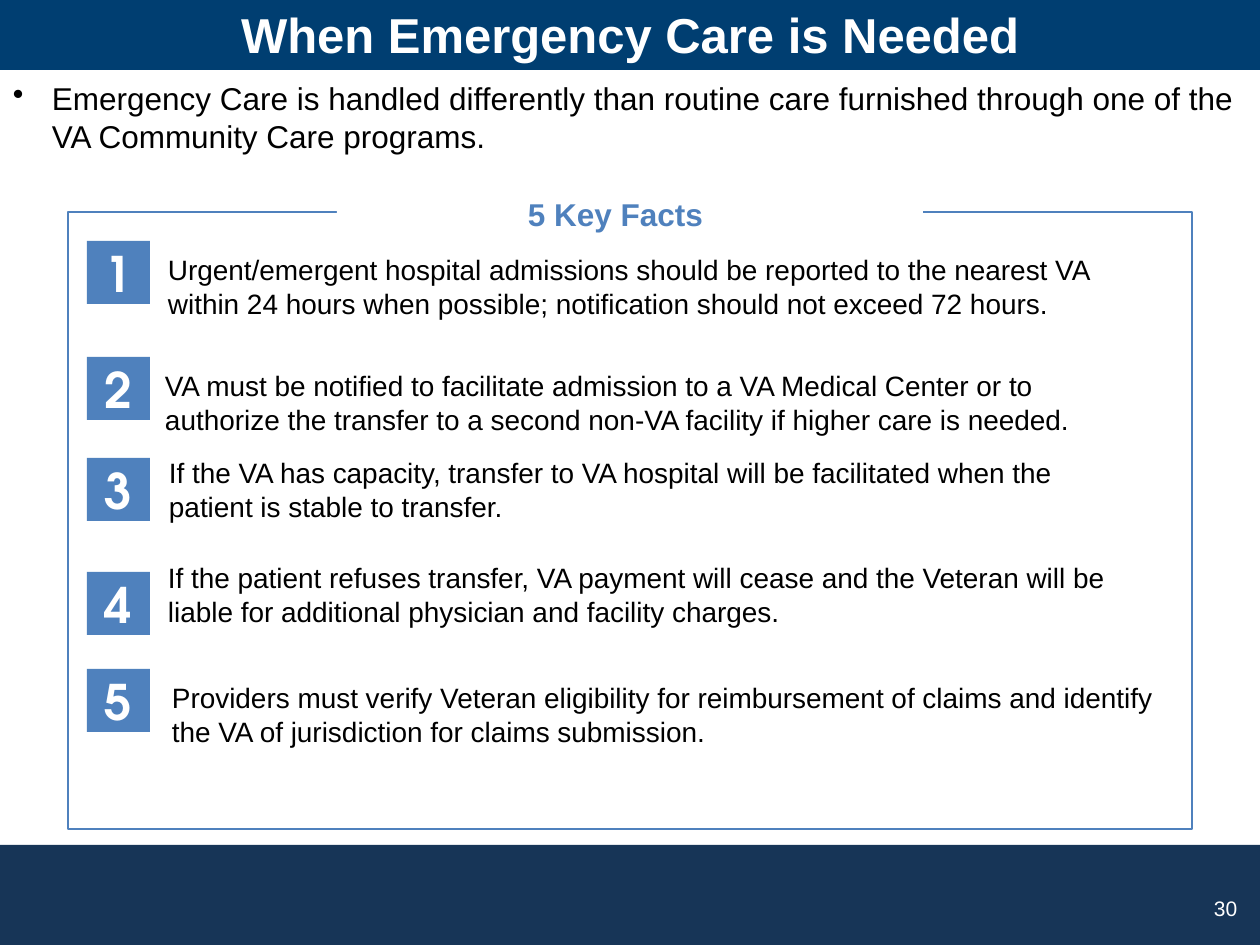
from lxml import etree
from pptx import Presentation
from pptx.dml.color import RGBColor
from pptx.enum.shapes import MSO_SHAPE
from pptx.enum.text import MSO_ANCHOR, PP_ALIGN
from pptx.oxml.ns import qn
from pptx.util import Emu, Pt

EMU_PER_PX = 914400 / 126
WHITE, BLACK, BLUE = "FFFFFF", "000000", "4F81BD"
NAVY, HEADER_BLUE = "173557", "003E71"
BADGE_LEFT, BADGE_SIZE = 87, 63

# badge top, text box (left, top, width), text
FACTS = [
    (241, (155, 247, 998),
     "Urgent/emergent hospital admissions should be reported to the nearest VA "
     "within 24 hours when possible; notification should not exceed 72 hours."),
    (357, (152, 363, 1003),
     "VA must be notified to facilitate admission to a VA Medical Center or to "
     "authorize the transfer to a second non-VA facility if higher care is needed."),
    (458, (156, 450, 998),
     "If the VA has capacity, transfer to VA hospital will be facilitated when the "
     "patient is stable to transfer."),
    (572, (155, 555, 998),
     "If the patient refuses transfer, VA payment will cease and the Veteran will be "
     "liable for additional physician and facility charges."),
    (669, (159, 675, 1033),
     "Providers must verify Veteran eligibility for reimbursement of claims and identify "
     "the VA of jurisdiction for claims submission."),
]


def px(value):
    return Emu(round(value * EMU_PER_PX))


def color(hex_string):
    return RGBColor.from_string(hex_string)


def write(shape, text, size, hex_color, bold=False, font="Arial",
          align=PP_ALIGN.LEFT, anchor=MSO_ANCHOR.TOP, insets=(13, 6, 13, 6)):
    """Fill a shape with one paragraph; insets are left, top, right, bottom."""
    frame = shape.text_frame
    frame.word_wrap = True
    frame.vertical_anchor = anchor
    (frame.margin_left, frame.margin_top,
     frame.margin_right, frame.margin_bottom) = map(px, insets)
    paragraph = frame.paragraphs[0]
    paragraph.text = text
    paragraph.alignment = align
    paragraph.font.name = font
    paragraph.font.size = Pt(size)
    paragraph.font.bold = bold
    paragraph.font.color.rgb = color(hex_color)
    return paragraph


def add_rectangle(shapes, left, top, width, height, fill=None, line=None):
    shape = shapes.add_shape(MSO_SHAPE.RECTANGLE, px(left), px(top), px(width), px(height))
    shape.shadow.inherit = False
    if fill:
        shape.fill.solid()
        shape.fill.fore_color.rgb = color(fill)
    else:
        shape.fill.background()
    if line:
        shape.line.color.rgb = color(line)
        shape.line.width = Pt(1.5)
    else:
        shape.line.fill.background()
    return shape


def add_text(shapes, left, top, width, height, text, size, hex_color, **options):
    box = shapes.add_textbox(px(left), px(top), px(width), px(height))
    return write(box, text, size, hex_color, **options)


def set_title(slide, text):
    title = slide.shapes.title
    title.left, title.top, title.width, title.height = px(63), px(-14), px(1134), px(77)
    write(title, text, 28, WHITE, bold=True, align=PP_ALIGN.CENTER,
          anchor=MSO_ANCHOR.BOTTOM, insets=(0, 0, 0, 0))


def add_bullet(paragraph, indent):
    properties = paragraph._p.get_or_add_pPr()
    properties.set("marL", str(px(indent)))
    properties.set("indent", str(px(-indent)))
    bullet = etree.Element(qn("a:buChar"), char="•")
    properties.insert_element_before(bullet, "a:tabLst", "a:defRPr", "a:extLst")


def add_key_facts(slide):
    shapes = slide.shapes.add_group_shape().shapes
    add_rectangle(shapes, 68, 212, 1124, 617, line=BLUE)
    heading = add_rectangle(shapes, 337, 189, 586, 50, fill=WHITE)
    write(heading, "5 Key Facts", 18, BLUE, bold=True, align=PP_ALIGN.CENTER,
          insets=(13, 6, 42, 6))
    for number, (badge_top, (left, top, width), text) in enumerate(FACTS, 1):
        add_text(shapes, left, top, width, 81, text, 16, BLACK)
        badge = add_rectangle(shapes, BADGE_LEFT, badge_top, BADGE_SIZE, BADGE_SIZE, fill=BLUE)
        write(badge, str(number), 28, WHITE, bold=True, font="TeX Gyre Adventor",
              align=PP_ALIGN.CENTER, anchor=MSO_ANCHOR.MIDDLE)


def main():
    presentation = Presentation()
    presentation.slide_width, presentation.slide_height = px(1260), px(945)
    slide = presentation.slides.add_slide(presentation.slide_layouts[5])
    shapes = slide.shapes
    footer = add_rectangle(shapes, 0, 845, 1260, 100, fill=NAVY)
    header = add_rectangle(shapes, 0, 0, 1260, 70, fill=HEADER_BLUE)
    # The bands go behind the title placeholder.
    for band in (footer, header):
        shapes.title._element.addprevious(band._element)
    set_title(slide, "When Emergency Care is Needed")
    add_text(shapes, 1211, 896, 40, 38, "30", 12, WHITE, insets=(3, 0, 0, 0))
    add_key_facts(slide)
    intro = add_text(
        shapes, 0, 73, 1260, 89,
        "Emergency Care is handled differently than routine care furnished through "
        "one of the VA Community Care programs.", 18, BLACK)
    add_bullet(intro, 39)
    presentation.save("out.pptx")


if __name__ == "__main__":
    main()
